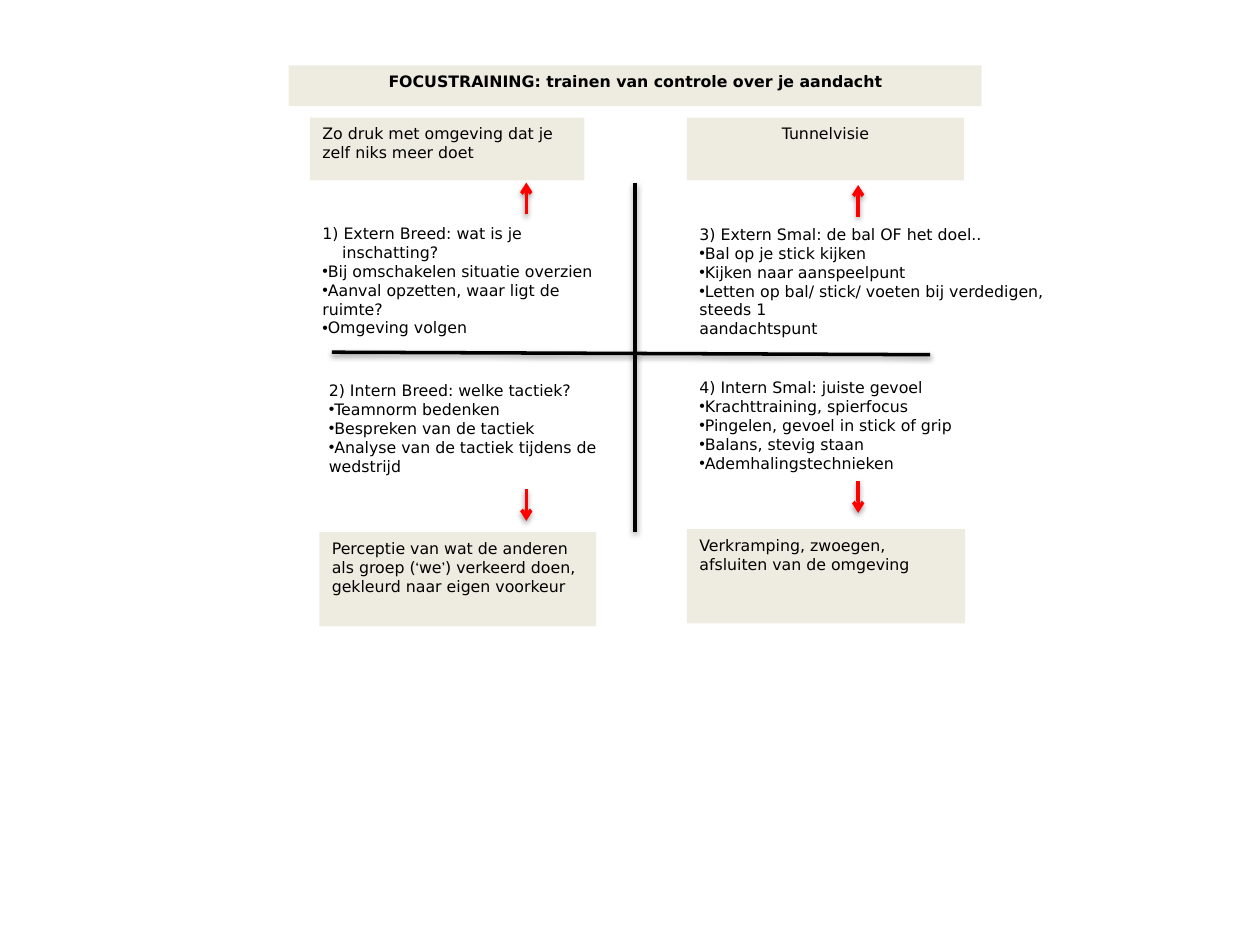
"""Build the focus training slide with its four attention quadrants."""
from lxml import etree
from pptx import Presentation
from pptx.dml.color import RGBColor
from pptx.enum.shapes import MSO_CONNECTOR, MSO_SHAPE
from pptx.enum.text import MSO_ANCHOR, PP_ALIGN
from pptx.oxml import parse_xml
from pptx.oxml.ns import qn
from pptx.util import Cm, Pt

STRAIGHT = MSO_CONNECTOR.STRAIGHT
RECTANGLE = MSO_SHAPE.RECTANGLE
TOP = MSO_ANCHOR.TOP
LEFT, CENTER = PP_ALIGN.LEFT, PP_ALIGN.CENTER

BLACK, RED, BEIGE = "000000", "FF0000", "EEECE1"
FONT, QUOTE_FONT, BULLET_FONT = "DejaVu Sans", "Cambria", "Arial"
HANGING = 0.4
RIGHT_COLUMN = 13.85
ARROW_LENGTH = 0.64

AXES = [(12.8, 3.68, 12.8, 10.72), (6.69, 7.1, 18.75, 7.15)]

QUADRANTS = [
    ((6.25, 4.38, 6.35, 3.23), "1) Extern Breed: wat is je\ninschatting?", [
        "Bij omschakelen situatie overzien",
        "Aanval opzetten, waar ligt de ruimte?",
        "Omgeving volgen"]),
    ((RIGHT_COLUMN, 4.4, 7.62, 3.23), "3) Extern Smal: de bal OF het doel..", [
        "Bal op je stick kijken",
        "Kijken naar aanspeelpunt",
        "Letten op bal/ stick/ voeten bij verdedigen, steeds 1 \naandachtspunt"]),
    ((6.38, 7.55, 6.35, 3.18), "2) Intern Breed: welke tactiek?", [
        "Teamnorm bedenken",
        "Bespreken van de tactiek",
        "Analyse van de tactiek tijdens de wedstrijd"]),
    ((RIGHT_COLUMN, 7.49, 8.26, 3.18), "4) Intern Smal: juiste gevoel", [
        "Krachttraining, spierfocus",
        "Pingelen, gevoel in stick of grip",
        "Balans, stevig staan",
        "Ademhalingstechnieken"]),
]

BOXES = [
    ((6.25, 2.37, 5.53, 1.27), LEFT, False,
     ["Zo druk met omgeving dat je zelf niks meer doet"]),
    ((RIGHT_COLUMN, 2.37, 5.58, 1.27), CENTER, False, ["Tunnelvisie"]),
    ((6.44, 10.73, 5.58, 1.9), LEFT, False,
     ["Perceptie van wat de anderen als groep (", "‘", "we", "’",
      ") verkeerd doen, gekleurd naar eigen voorkeur"]),
    ((RIGHT_COLUMN, 10.67, 5.61, 1.9), LEFT, False,
     ["Verkramping, zwoegen, afsluiten van de omgeving"]),
    ((5.82, 1.32, 13.97, 0.82), CENTER, True,
     ["FOCUSTRAINING: trainen van controle over je aandacht"]),
]

ARROWS = [(10.61, 4.32, -1), (17.3, 4.37, -1), (10.61, 9.86, 1), (17.3, 9.7, 1)]

SHADOW = (
    '<a:effectLst xmlns:a="http://schemas.openxmlformats.org/drawingml/2006/main">'
    '<a:outerShdw blurRad="40000" dist="20000" dir="5400000" rotWithShape="0">'
    '<a:srgbClr val="000000"><a:alpha val="38000"/></a:srgbClr>'
    '</a:outerShdw></a:effectLst>')


def color(value):
    return RGBColor.from_string(value)


def lengths(values):
    return [Cm(value) for value in values]


def add_run(paragraph, text, bold=False):
    run = paragraph.add_run()
    run.text = text
    run.font.name = QUOTE_FONT if text in "‘’" else FONT
    run.font.size = Pt(9)
    run.font.bold = bold
    run.font.color.rgb = color(BLACK)


def add_lines(paragraph, text):
    for index, line in enumerate(text.split("\n")):
        if index:
            paragraph.add_line_break()
        add_run(paragraph, line)


def add_line(slide, ends, line_color, arrow=False):
    connector = slide.shapes.add_connector(STRAIGHT, *lengths(ends))
    connector.line.width = Pt(2)
    connector.line.color.rgb = color(line_color)
    if arrow:
        line = connector.line._get_or_add_ln()
        etree.SubElement(line, qn("a:tailEnd"), type="arrow")
    connector._element.spPr.append(parse_xml(SHADOW))


def add_quadrant(slide, place, heading, points):
    frame = slide.shapes.add_textbox(*lengths(place)).text_frame
    frame.word_wrap = True
    title = frame.paragraphs[0]
    properties = title._p.get_or_add_pPr()
    properties.set("marL", str(Cm(HANGING)))
    properties.set("indent", str(-Cm(HANGING)))
    add_lines(title, heading)
    for point in points:
        paragraph = frame.add_paragraph()
        properties = paragraph._p.get_or_add_pPr()
        etree.SubElement(properties, qn("a:buFont"), typeface=BULLET_FONT)
        etree.SubElement(properties, qn("a:buChar"), char="•")
        add_lines(paragraph, point)


def add_box(slide, place, alignment, bold, texts):
    shape = slide.shapes.add_shape(RECTANGLE, *lengths(place))
    shape.shadow.inherit = False
    shape.fill.solid()
    shape.fill.fore_color.rgb = color(BEIGE)
    shape.line.fill.background()
    frame = shape.text_frame
    frame.word_wrap = True
    frame.vertical_anchor = TOP
    paragraph = frame.paragraphs[0]
    paragraph.alignment = alignment
    for text in texts:
        add_run(paragraph, text, bold)


def main():
    presentation = Presentation()
    presentation.slide_width, presentation.slide_height = Cm(25.4), Cm(19.05)
    slide = presentation.slides.add_slide(presentation.slide_layouts[6])
    for ends in AXES:
        add_line(slide, ends, BLACK)
    for quadrant in QUADRANTS:
        add_quadrant(slide, *quadrant)
    for box in BOXES:
        add_box(slide, *box)
    for x, y, direction in ARROWS:
        add_line(slide, (x, y, x, y + direction * ARROW_LENGTH), RED, arrow=True)
    presentation.save("out.pptx")


if __name__ == "__main__":
    main()
